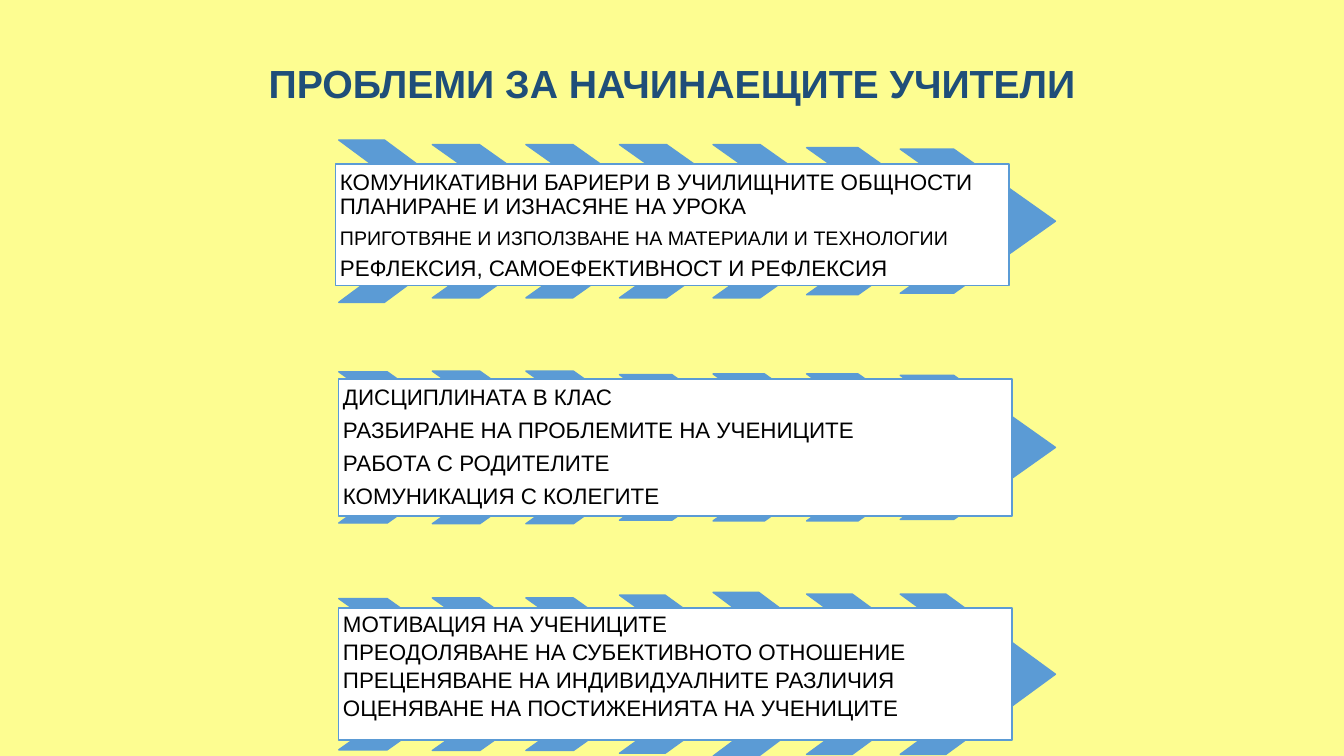
"""Build a slide listing the problems of beginning teachers on three chevron arrows."""
from pptx import Presentation
from pptx.dml.color import RGBColor
from pptx.enum.shapes import MSO_SHAPE
from pptx.enum.text import MSO_ANCHOR, PP_ALIGN
from pptx.util import Pt

CHEVRON, RECTANGLE = MSO_SHAPE.CHEVRON, MSO_SHAPE.RECTANGLE
MIDDLE, TOP = MSO_ANCHOR.MIDDLE, MSO_ANCHOR.TOP
LEFT, CENTER = PP_ALIGN.LEFT, PP_ALIGN.CENTER

BLUE = "5B9BD5"
CHEVRON_LEFT, CHEVRON_PITCH, CHEVRON_WIDTH = 242, 66.84, 110.9
BOX_WIDTH, INSET = 481, 3

PROBLEM_GROUPS = [
    {
        "center": 158,
        "chevron_heights": [116, 109.5, 109.5, 109.5, 109.5, 105, 103],
        "box": (239.8, 117.2, 86.6),
        "anchor": MIDDLE,
        "inset_top": INSET,
        "lines": [
            ("КОМУНИКАТИВНИ БАРИЕРИ В УЧИЛИЩНИТЕ ОБЩНОСТИ", 16, 1, 0),
            ("ПЛАНИРАНЕ И ИЗНАСЯНЕ НА УРОКА", 16, 0.9, 6.4),
            ("ПРИГОТВЯНЕ И ИЗПОЛЗВАНЕ НА МАТЕРИАЛИ И ТЕХНОЛОГИИ", 14, 0.9, 5.6),
            ("РЕФЛЕКСИЯ, САМОЕФЕКТИВНОСТ И РЕФЛЕКСИЯ", 16, 0.9, 0),
        ],
    },
    {
        "center": 319.6,
        "chevron_heights": [108, 109, 109, 104, 105, 105, 103],
        "box": (242, 270.7, 98),
        "anchor": MIDDLE,
        "inset_top": INSET,
        "lines": [
            ("ДИСЦИПЛИНАТА В КЛАС", 16, 0.9, 6.4),
            ("РАЗБИРАНЕ НА ПРОБЛЕМИТЕ НА УЧЕНИЦИТЕ", 16, 0.9, 6.4),
            ("РАБОТА С РОДИТЕЛИТЕ", 16, 0.9, 6.4),
            ("КОМУНИКАЦИЯ С КОЛЕГИТЕ", 16, 0.9, 0),
        ],
    },
    {
        "center": 481.6,
        "chevron_heights": [108, 109, 109, 113, 117, 114.5, 114.5],
        "box": (242, 434.2, 94.4),
        "anchor": TOP,
        "inset_top": 1.5,
        "lines": [
            ("МОТИВАЦИЯ НА УЧЕНИЦИТЕ", 16, 1, 0.9),
            ("ПРЕОДОЛЯВАНЕ НА СУБЕКТИВНОТО ОТНОШЕНИЕ", 16, 1, 0.9),
            ("ПРЕЦЕНЯВАНЕ НА ИНДИВИДУАЛНИТЕ РАЗЛИЧИЯ", 16, 1, 0.9),
            ("ОЦЕНЯВАНЕ НА ПОСТИЖЕНИЯТА НА УЧЕНИЦИТЕ", 16, 1, 0),
        ],
    },
]


def paint(color_format, color):
    color_format.rgb = RGBColor.from_string(color)


def add_outlined_shape(kind, left, top, width, height, fill):
    shape = slide.shapes.add_shape(kind, Pt(left), Pt(top), Pt(width), Pt(height))
    shape.shadow.inherit = False
    shape.fill.solid()
    paint(shape.fill.fore_color, fill)
    paint(shape.line.color, BLUE)
    shape.line.width = Pt(1)
    return shape


presentation = Presentation()
presentation.slide_width, presentation.slide_height = Pt(960), Pt(540)
slide = presentation.slides.add_slide(presentation.slide_layouts[6])
slide.background.fill.solid()
paint(slide.background.fill.fore_color, "FDFD91")

title = slide.shapes.add_textbox(Pt(66), Pt(28.8), Pt(828), Pt(65.5))
title.text_frame.text = "ПРОБЛЕМИ ЗА НАЧИНАЕЩИТЕ УЧИТЕЛИ"
title.text_frame.word_wrap = True
title.text_frame.vertical_anchor = MIDDLE
paragraph = title.text_frame.paragraphs[0]
paragraph.alignment = CENTER
paragraph.line_spacing = 0.9
title_font = paragraph.runs[0].font
title_font.name, title_font.size, title_font.bold = "Arial", Pt(28), True
paint(title_font.color, "1F4E79")

for group in PROBLEM_GROUPS:
    for index, height in enumerate(group["chevron_heights"]):
        chevron = add_outlined_shape(
            CHEVRON, CHEVRON_LEFT + index * CHEVRON_PITCH,
            group["center"] - height / 2, CHEVRON_WIDTH, height, BLUE)
        chevron.adjustments[0] = 0.706

    left, top, height = group["box"]
    box = add_outlined_shape(RECTANGLE, left, top, BOX_WIDTH, height, "FFFFFF")
    text_frame = box.text_frame
    text_frame.word_wrap = True
    text_frame.vertical_anchor = group["anchor"]
    text_frame.margin_left = text_frame.margin_right = Pt(INSET)
    text_frame.margin_top, text_frame.margin_bottom = Pt(group["inset_top"]), Pt(INSET)
    text_frame.text = "\n".join(line[0] for line in group["lines"])
    for paragraph, (_, size, spacing, after) in zip(text_frame.paragraphs, group["lines"]):
        paragraph.alignment = LEFT
        paragraph.line_spacing = spacing
        paragraph.space_after = Pt(after)
        font = paragraph.runs[0].font
        font.name, font.size = "Arial", Pt(size)
        paint(font.color, "000000")

presentation.save("out.pptx")
